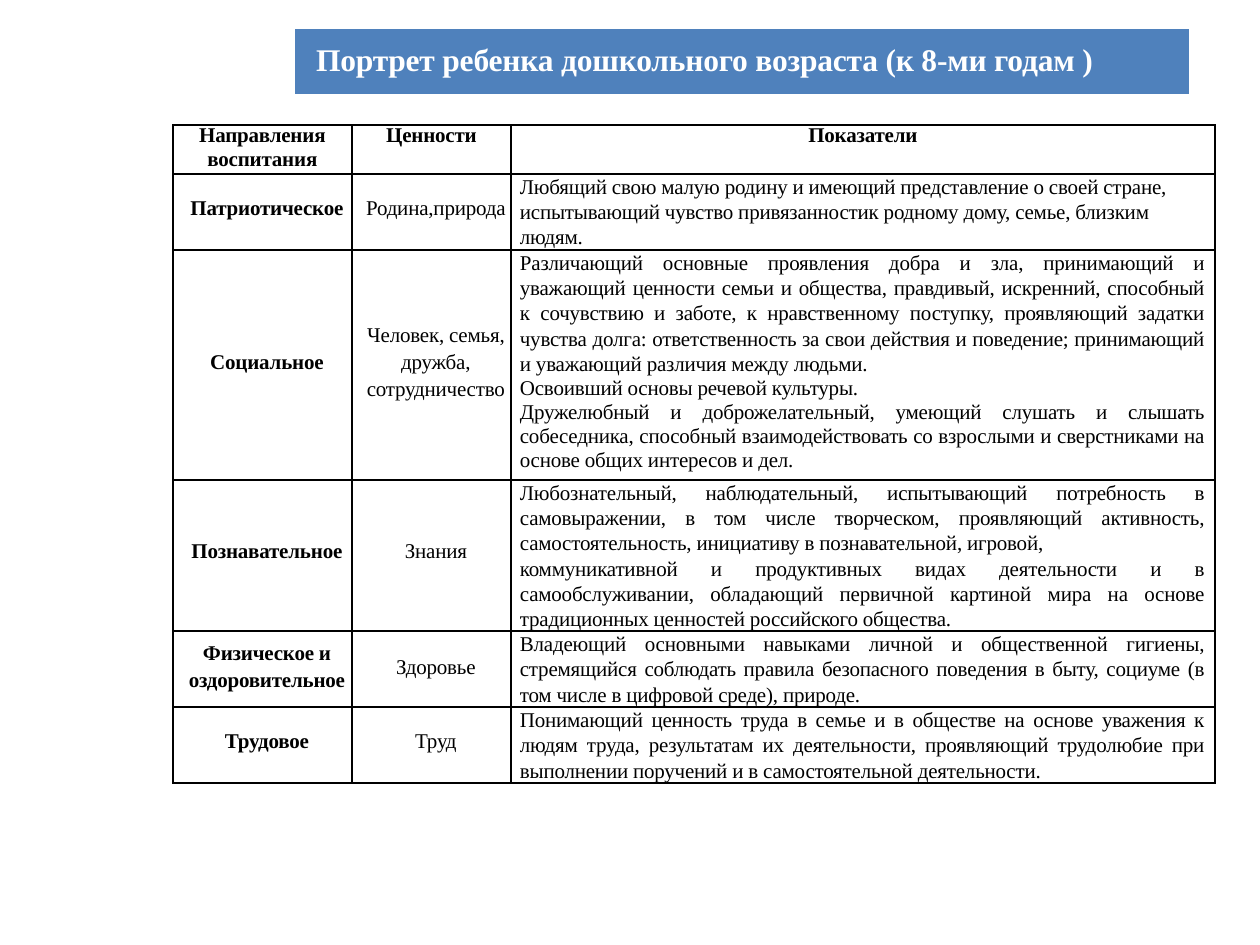
from dataclasses import dataclass

from lxml.etree import SubElement
from pptx import Presentation
from pptx.dml.color import RGBColor
from pptx.enum.text import MSO_ANCHOR, MSO_AUTO_SIZE, PP_ALIGN
from pptx.oxml.ns import qn
from pptx.util import Emu, Pt


@dataclass(frozen=True)
class Theme:
    font: str = "Times New Roman"
    banner: RGBColor = RGBColor(0x4F, 0x81, 0xBC)
    paper: RGBColor = RGBColor(0xFF, 0xFF, 0xFF)
    ink: RGBColor = RGBColor(0, 0, 0)
    title_size: int = 18
    body_size: int = 12
    tracking: int = -10
    border: int = 1


theme = Theme()


def px(length):
    return Emu(round(length * 914400 / 126))


def write(paragraph, text, size, color, bold, align):
    run = paragraph.add_run()
    run.text = text
    run._r.get_or_add_rPr().set("spc", str(theme.tracking))
    paragraph.alignment = align
    font = paragraph.font
    font.name = theme.font
    font.size = Pt(size)
    font.bold = bold
    font.color.rgb = color


headings = [["Направления", "воспитания"], ["Ценности"], ["Показатели"]]
directions = [
    (["Патриотическое"], ["Родина,природа"], [
        "Любящий свою малую родину и имеющий представление о своей стране, "
        "испытывающий чувство привязанностик родному дому, семье, близким людям.",
    ]),
    (["Социальное"], ["Человек, семья, дружба,", "сотрудничество"], [
        "Различающий основные проявления добра и зла, принимающий и уважающий "
        "ценности семьи и общества, правдивый, искренний, способный к сочувствию "
        "и заботе, к нравственному поступку, проявляющий задатки чувства долга: "
        "ответственность за свои действия и поведение; принимающий и уважающий "
        "различия между людьми.",
        "Освоивший основы речевой культуры.",
        "Дружелюбный и доброжелательный, умеющий слушать и слышать собеседника, "
        "способный взаимодействовать со взрослыми и сверстниками на основе общих "
        "интересов и дел.",
    ]),
    (["Познавательное"], ["Знания"], [
        "Любознательный, наблюдательный, испытывающий потребность в "
        "самовыражении, в том числе творческом, проявляющий активность, "
        "самостоятельность, инициативу в познавательной, игровой,",
        "коммуникативной и продуктивных видах деятельности и в "
        "самообслуживании, обладающий первичной картиной мира на основе "
        "традиционных ценностей российского общества.",
    ]),
    (["Физическое и оздоровительное"], ["Здоровье"], [
        "Владеющий основными навыками личной и общественной гигиены, стремящийся "
        "соблюдать правила безопасного поведения в быту, социуме (в том числе в "
        "цифровой среде), природе.",
    ]),
    (["Трудовое"], ["Труд"], [
        "Понимающий ценность труда в семье и в обществе на основе уважения к людям "
        "труда, результатам их деятельности, проявляющий трудолюбие при выполнении "
        "поручений и в самостоятельной деятельности.",
    ]),
]
column_widths = [179, 159, 704]
row_heights = [49, 76, 230, 151, 76, 76]

presentation = Presentation()
presentation.slide_width = px(1260)
presentation.slide_height = px(945)
slide = presentation.slides.add_slide(presentation.slide_layouts[5])

title = slide.shapes.title
title.left, title.top, title.width, title.height = px(293), px(27), px(898), px(69)
title.fill.solid()
title.fill.fore_color.rgb = theme.banner
title.line.color.rgb = theme.paper
title.line.width = Pt(2)
title_text = title.text_frame
title_text.auto_size = MSO_AUTO_SIZE.NONE
title_text.word_wrap = True
title_text.vertical_anchor = MSO_ANCHOR.MIDDLE
title_text.margin_left = px(23)
title_text.margin_right = title_text.margin_top = 0
title_text.margin_bottom = px(6)
write(title_text.paragraphs[0], "Портрет ребенка дошкольного возраста (к 8-ми годам )",
      theme.title_size, theme.paper, True, PP_ALIGN.LEFT)

portrait = slide.shapes.add_table(
    len(row_heights), len(column_widths), px(173), px(125),
    px(sum(column_widths)), px(sum(row_heights))).table
portrait.first_row = portrait.horz_banding = False
for column, width in zip(portrait.columns, column_widths):
    column.width = px(width)
for row, height in zip(portrait.rows, row_heights):
    row.height = px(height)

for row_index, entries in enumerate([headings, *directions]):
    for column_index, lines in enumerate(entries):
        is_heading = row_index == 0
        is_indicator = column_index == 2 and not is_heading
        cell = portrait.cell(row_index, column_index)
        cell.margin_top = 0
        cell.margin_left = 0 if is_heading else px(9)
        cell.margin_right = px(10) if is_indicator else 0
        cell.margin_bottom = 0 if is_heading or is_indicator else px(8)
        cell.vertical_anchor = (
            MSO_ANCHOR.TOP if is_heading or is_indicator else MSO_ANCHOR.MIDDLE)

        properties = cell._tc.get_or_add_tcPr()
        for side in ("a:lnL", "a:lnR", "a:lnT", "a:lnB"):
            edge = SubElement(properties, qn(side), w=str(Pt(theme.border)))
            SubElement(SubElement(edge, qn("a:solidFill")), qn("a:srgbClr"),
                       val=str(theme.ink))
        cell.fill.solid()
        cell.fill.fore_color.rgb = theme.paper

        if not is_indicator:
            align = PP_ALIGN.CENTER
        elif row_index == 1:
            align = PP_ALIGN.LEFT
        else:
            align = PP_ALIGN.JUSTIFY
        for line_index, line in enumerate(lines):
            frame = cell.text_frame
            paragraph = frame.add_paragraph() if line_index else frame.paragraphs[0]
            if is_heading:
                paragraph.line_spacing = Pt(13.8 if line_index else 12.6)
            elif not is_indicator:
                paragraph.line_spacing = 1.15 if row_index in (2, 4) else 1.0
            elif row_index == 2 and line_index:
                paragraph.line_spacing = Pt(13.8)
            else:
                paragraph.line_spacing = Pt(14.4)
            write(paragraph, line, theme.body_size, theme.ink,
                  is_heading or column_index == 0, align)

presentation.save("out.pptx")
